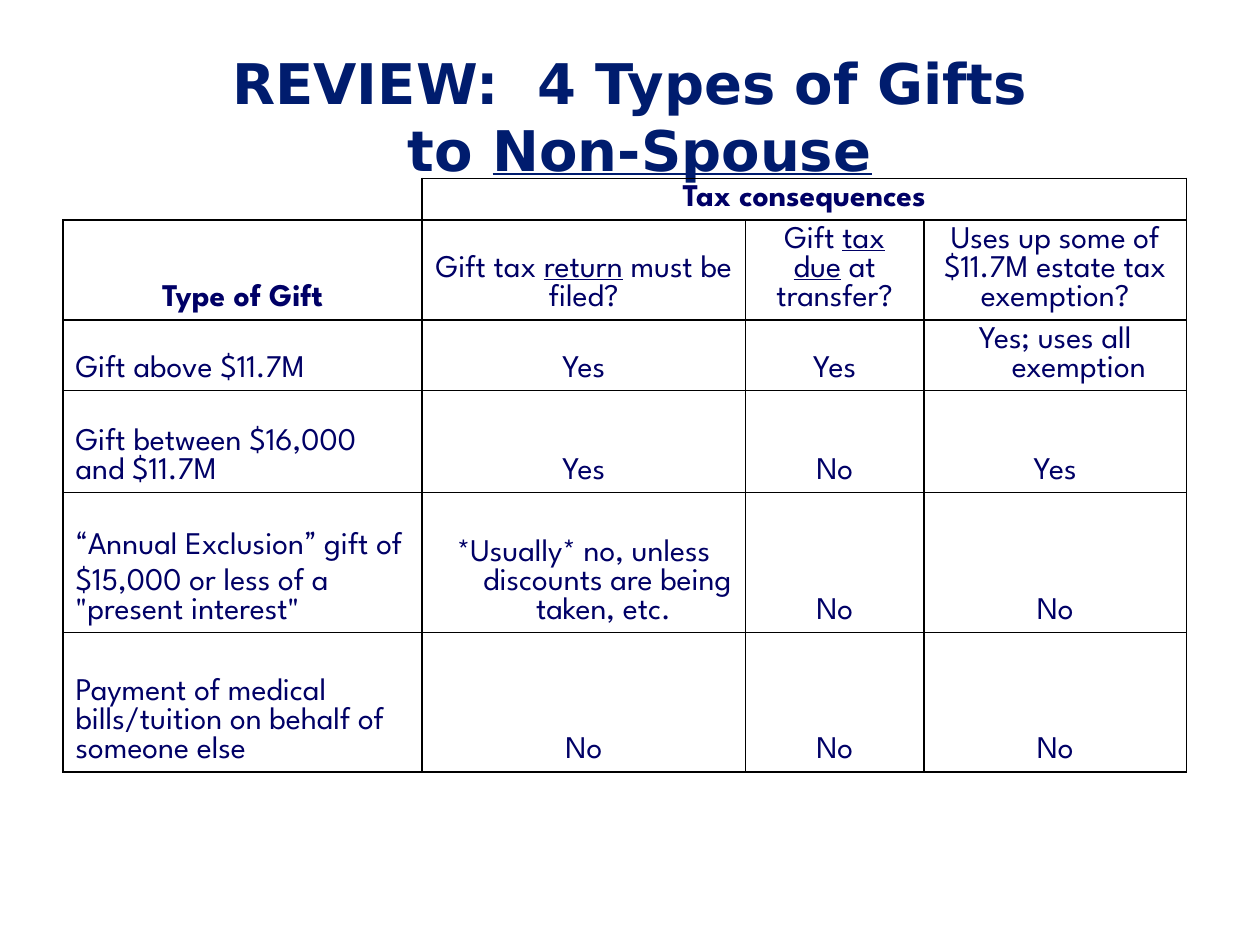
"""Build a slide that compares the tax consequences of four types of gifts."""
from dataclasses import dataclass

from lxml import etree
from pptx import Presentation
from pptx.dml.color import RGBColor
from pptx.enum.text import MSO_ANCHOR, MSO_AUTO_SIZE, PP_ALIGN
from pptx.oxml.ns import qn
from pptx.util import Pt

CENTER, LEFT = PP_ALIGN.CENTER, PP_ALIGN.LEFT
BOTTOM = MSO_ANCHOR.BOTTOM
NO_AUTOFIT = MSO_AUTO_SIZE.NONE
TITLE_ONLY = 5
TITLE_FONT, BODY_FONT, QUOTE_FONT = "DejaVu Sans", "League Spartan", "Vollkorn"
NAVY, INK, BLACK, WHITE = "001C6E", "000066", "000000", "FFFFFF"
TITLE_SIZE, BODY_SIZE, BLANK_SIZE = 32, 18, 8
HANGING = 27
COLUMN_WIDTHS = (205.2, 184.8, 102, 150)
ROW_HEIGHTS = (23.8, 53.3, 36, 58.3, 79.9, 79.9)


@dataclass(frozen=True)
class Span:
    text: str
    underline: bool = False
    font: str = BODY_FONT


@dataclass(frozen=True)
class Entry:
    spans: tuple[Span, ...]
    align: PP_ALIGN = CENTER
    hanging: bool = False
    bold: bool = False
    fill: str | None = None


def answer(text: str, bold: bool = False, fill: str | None = None) -> Entry:
    return Entry((Span(text),), hanging=True, bold=bold, fill=fill)


def gift(*spans: Span) -> Entry:
    return Entry(spans, align=LEFT)


def question(*spans: Span) -> Entry:
    return Entry(spans)


ROWS = (
    (None, answer("Tax consequences", bold=True), None, None),
    (
        answer("Type of Gift", bold=True),
        question(Span("Gift tax "), Span("return", True), Span(" must be filed?")),
        question(Span("Gift "), Span("tax due", True), Span(" at transfer?")),
        question(Span("Uses up some of $11.7M estate tax exemption?")),
    ),
    (
        gift(Span("Gift above $11.7M")),
        answer("Yes"), answer("Yes"), answer("Yes; uses all exemption"),
    ),
    (
        gift(Span("Gift between $16,000 and $11.7M")),
        answer("Yes"), answer("No"), answer("Yes"),
    ),
    (
        gift(
            Span("“", font=QUOTE_FONT),
            Span("Annual Exclusion"),
            Span("”", font=QUOTE_FONT),
            Span(' gift of $15,000 or less of a "present interest"'),
        ),
        answer("*Usually* no, unless discounts are being taken, etc. "),
        answer("No"), answer("No", fill=WHITE),
    ),
    (
        gift(Span("Payment of medical bills/tuition on behalf of someone else")),
        answer("No"), answer("No"), answer("No", fill=WHITE),
    ),
)


def rgb(color: str) -> RGBColor:
    return RGBColor.from_string(color)


def style_run(run, font: str, size: float, color: str, bold: bool, underline: bool) -> None:
    run.font.name = font
    run.font.size = Pt(size)
    run.font.color.rgb = rgb(color)
    run.font.bold = bold
    run.font.underline = underline


def set_borders(cell, visible: str) -> None:
    properties = cell._tc.get_or_add_tcPr()
    for position, side in enumerate("LRTB"):
        line = etree.Element(qn(f"a:ln{side}"), w=str(Pt(1)))
        if side in visible:
            solid = etree.SubElement(line, qn("a:solidFill"))
            etree.SubElement(solid, qn("a:srgbClr"), val=BLACK)
        else:
            etree.SubElement(line, qn("a:noFill"))
        properties.insert(position, line)


def write_entry(cell, entry: Entry) -> None:
    cell.vertical_anchor = BOTTOM
    paragraph = cell.text_frame.paragraphs[0]
    paragraph.alignment = entry.align
    if entry.hanging:
        indents = paragraph._p.get_or_add_pPr()
        indents.set("marL", str(Pt(HANGING)))
        indents.set("indent", str(-Pt(HANGING)))
    for span in entry.spans:
        run = paragraph.add_run()
        run.text = span.text
        style_run(run, span.font, BODY_SIZE, INK, entry.bold, span.underline)
    if entry.fill:
        cell.fill.solid()
        cell.fill.fore_color.rgb = rgb(entry.fill)


def shrink_blank(cell) -> None:
    paragraph = cell.text_frame.paragraphs[0]
    etree.SubElement(paragraph._p, qn("a:endParaRPr"), sz=str(BLANK_SIZE * 100))


def add_heading(slide) -> None:
    title = slide.shapes.title
    title.left, title.top, title.width, title.height = Pt(45), Pt(24), Pt(630), Pt(84)
    frame = title.text_frame
    frame.auto_size = NO_AUTOFIT
    frame.word_wrap = True
    frame.vertical_anchor = BOTTOM
    heading = frame.paragraphs[0]
    heading.text = "REVIEW:  4 Types of Gifts\v to "
    heading.alignment = CENTER
    recipient = heading.add_run()
    recipient.text = "Non-Spouse"
    for run in heading.runs:
        style_run(run, TITLE_FONT, TITLE_SIZE, NAVY, True, run.text == recipient.text)
    for line_break in heading._p.findall(qn("a:br")):
        etree.SubElement(line_break, qn("a:rPr"), sz=str(TITLE_SIZE * 100))


def add_gift_table(slide) -> None:
    table = slide.shapes.add_table(
        len(ROWS), len(COLUMN_WIDTHS), Pt(36), Pt(102),
        Pt(sum(COLUMN_WIDTHS)), Pt(sum(ROW_HEIGHTS)),
    ).table
    table.first_row = False
    table.horz_banding = False
    for column, width in zip(table.columns, COLUMN_WIDTHS):
        column.width = Pt(width)
    for row, height in zip(table.rows, ROW_HEIGHTS):
        row.height = Pt(height)
    table.cell(0, 1).merge(table.cell(0, 3))
    for row_index, entries in enumerate(ROWS):
        for column_index, entry in enumerate(entries):
            cell = table.cell(row_index, column_index)
            cell.fill.background()
            set_borders(cell, "RB" if row_index == column_index == 0 else "LRTB")
            if entry:
                write_entry(cell, entry)
            else:
                shrink_blank(cell)


def main() -> None:
    deck = Presentation()
    deck.slide_width, deck.slide_height = Pt(720), Pt(540)
    slide = deck.slides.add_slide(deck.slide_layouts[TITLE_ONLY])
    slide.background.fill.solid()
    slide.background.fill.fore_color.rgb = rgb(WHITE)
    add_heading(slide)
    add_gift_table(slide)
    deck.save("out.pptx")


if __name__ == "__main__":
    main()
